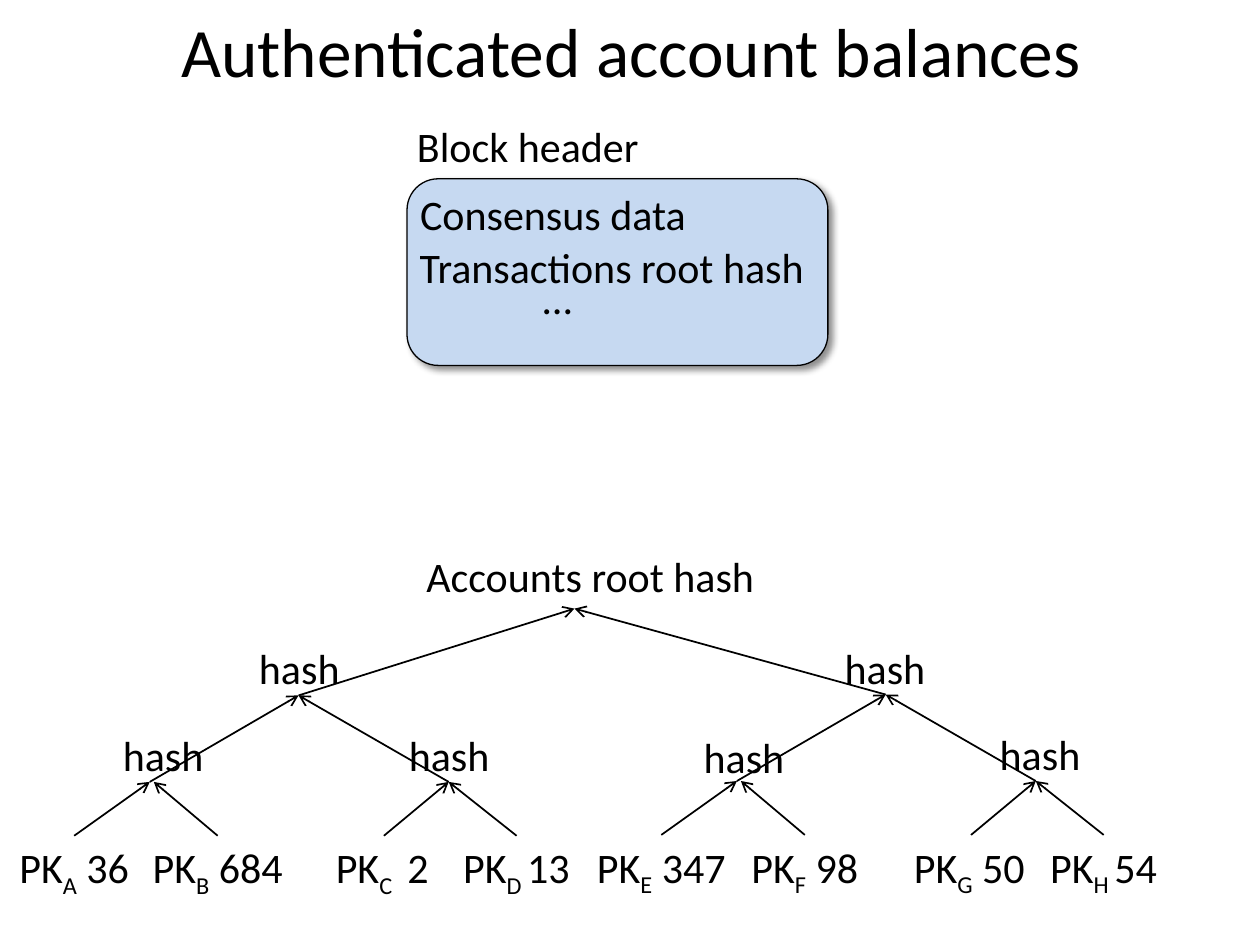
from lxml import etree
from pptx import Presentation
from pptx.dml.color import RGBColor
from pptx.enum.shapes import MSO_CONNECTOR, MSO_SHAPE
from pptx.enum.text import MSO_ANCHOR, PP_ALIGN
from pptx.oxml import parse_xml
from pptx.oxml.ns import qn
from pptx.util import Pt

BLACK = RGBColor(0, 0, 0)
BLUE = RGBColor(0xC6, 0xD9, 0xF1)
FONT = "Calibri"
LINE = MSO_CONNECTOR.STRAIGHT
ROUND = MSO_SHAPE.ROUNDED_RECTANGLE
CENTER = PP_ALIGN.CENTER
MIDDLE = MSO_ANCHOR.MIDDLE
TOP = MSO_ANCHOR.TOP
ROW = 36  # height of a line of text with its margins
SHADOW = (
    '<a:effectLst xmlns:a="http://schemas.openxmlformats.org/drawingml/2006/main">'
    '<a:outerShdw blurRad="50800" dist="38100" dir="2700000" algn="tl" rotWithShape="0">'
    '<a:srgbClr val="000000"><a:alpha val="43000"/></a:srgbClr>'
    '</a:outerShdw></a:effectLst>'
)


def add_text(slide, x, y, w, runs, h=ROW, size=24, anchor=TOP):
    """Centred text; runs are (text, is subscript) pairs."""
    box = slide.shapes.add_textbox(Pt(x), Pt(y), Pt(w), Pt(h))
    frame = box.text_frame
    frame.word_wrap = True
    frame.vertical_anchor = anchor
    para = frame.paragraphs[0]
    para.alignment = CENTER
    para.font.name = FONT
    para.font.size = Pt(size)
    para.font.color.rgb = BLACK
    for text, sub in runs:
        run = para.add_run()
        run.text = text
        if sub:
            run.font._element.set("baseline", "-25000")


def add_label(slide, x, y, w, text):
    add_text(slide, x, y, w, [(text, False)])


def add_arrow(slide, x1, y1, x2, y2):
    arrow = slide.shapes.add_connector(LINE, Pt(x1), Pt(y1), Pt(x2), Pt(y2))
    arrow.line.color.rgb = BLACK
    arrow.line.width = Pt(1)
    etree.SubElement(arrow.line._get_or_add_ln(), qn("a:tailEnd"), type="arrow")
    etree.SubElement(arrow._element.spPr, qn("a:effectLst"))


def add_header(slide, x, y, w, h):
    """Block header: a shadowed box, its heading and its entries."""
    box = slide.shapes.add_shape(ROUND, Pt(x), Pt(y), Pt(w), Pt(h))
    box.fill.solid()
    box.fill.fore_color.rgb = BLUE
    box.line.color.rgb = BLACK
    box.line.width = Pt(0.75)
    box._element.spPr.append(parse_xml(SHADOW))

    for dx, dy, width, text in [
        (-18, -36.7, 174, "Block header"),
        (-3.6, 2.2, 174, "Consensus data"),
        (-11.5, 32.4, 257, "Transactions root hash"),
        (65.5, 49.7, 41, "…"),
    ]:
        add_label(slide, x + dx, y + dy, width, text)


def add_branch(slide, x, y, root, leaves, hashes):
    """Half of the tree: four accounts, two hashes and one hash above."""
    peak = (x + 187.2, y + 33.8)
    nodes = [x + 102.2, x + 273]
    base, low = y + 114, y + 83.2

    # Accounts
    for dx, (key, value) in zip((0, 82, 176, 252.7), leaves):
        runs = [("PK", False), (key, True), (value, False)]
        add_text(slide, x + dx, base, 118, runs)

    # Arrows from accounts up to the root
    for start, end in [(59, 102.2), (141, 104.5), (236, 273), (311.8, 273)]:
        add_arrow(slide, x + start, base, x + end, low)
    for node in nodes:
        add_arrow(slide, node, low, *peak)
    add_arrow(slide, *peak, *root)

    # Hashes
    for dx, dy in hashes:
        add_label(slide, x + dx, y + dy, 68.4, "hash")


def add_tree(slide, x, y):
    """Accounts tree, placed by the middle of its root's lower edge."""
    add_label(slide, x - 92.2, y - 36.7, 202.3, "Accounts root hash")
    add_branch(
        slide, x - 344.9, y + 15.8, (x, y),
        [("A", " 36"), ("B", " 684"), ("C ", " 2"), ("D ", "13")],
        [(75.6, 49.7), (239, 49.7), (153.4, 0)])
    add_branch(
        slide, x - 9.4, y + 15.3, (x, y),
        [("E", " 347"), ("F", " 98"), ("G", " 50"), ("H ", "54")],
        [(72, 51.6), (241.2, 49.5), (152.6, 0.5)])


def main():
    deck = Presentation()
    deck.slide_width, deck.slide_height = Pt(720), Pt(540)
    slide = deck.slides.add_slide(deck.slide_layouts[6])
    add_text(slide, 18.7, 5, 684, [("Authenticated account balances", False)],
             h=47.5, size=39.6, anchor=MIDDLE)
    add_header(slide, 232.6, 102.2, 240.5, 106.6)
    add_tree(slide, 328.3, 347.8)
    deck.save("out.pptx")


if __name__ == "__main__":
    main()
